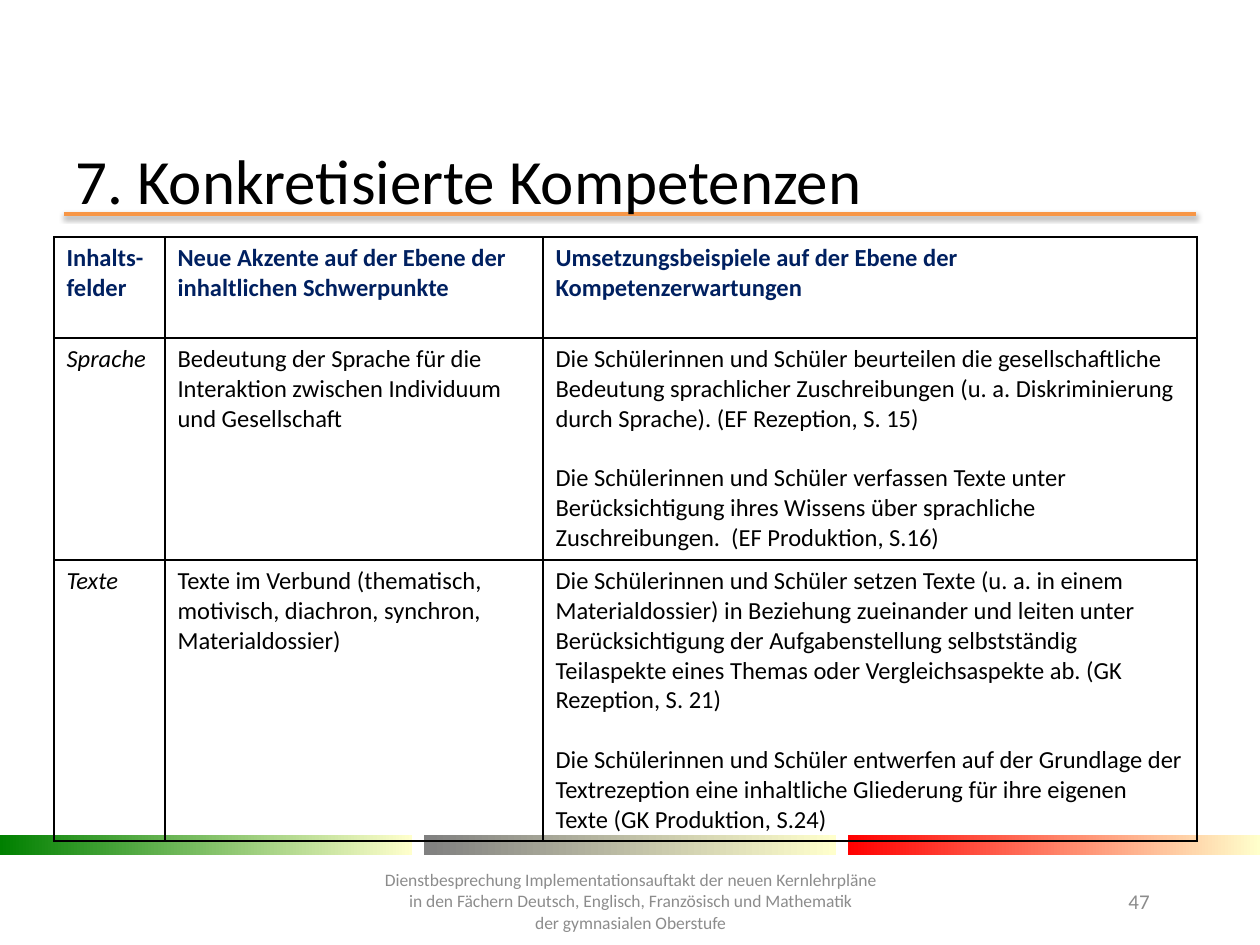
from dataclasses import dataclass

from lxml.etree import SubElement
from pptx import Presentation
from pptx.dml.color import RGBColor
from pptx.enum.shapes import MSO_CONNECTOR, MSO_SHAPE
from pptx.enum.text import MSO_ANCHOR, PP_ALIGN
from pptx.oxml.ns import qn
from pptx.util import Emu, Pt


@dataclass(frozen=True)
class Theme:
    """Colours, font and type sizes of the slide."""
    font: str = "Calibri"
    ink: str = "000000"
    heading: str = "002060"
    muted: str = "8C8C8C"
    accent: str = "F79646"
    green: str = "008000"
    grey: str = "808080"
    red: str = "FF0000"
    cream: str = "FFFFCC"
    title_size: int = 36
    body_size: int = 14
    number_size: int = 12
    footer_size: int = 10
    paragraph_gap: int = 17


THEME = Theme()

HEADINGS = [
    "Inhalts-felder",
    "Neue Akzente auf der Ebene der inhaltlichen Schwerpunkte",
    "Umsetzungsbeispiele auf der Ebene der Kompetenzerwartungen",
]
FIELDS = [
    (
        "Sprache",
        "Bedeutung der Sprache für die Interaktion zwischen Individuum und Gesellschaft",
        "Die Schülerinnen und Schüler beurteilen die gesellschaftliche Bedeutung "
        "sprachlicher Zuschreibungen (u. a. Diskriminierung durch Sprache). "
        "(EF Rezeption, S. 15)\n"
        "Die Schülerinnen und Schüler verfassen Texte unter Berücksichtigung ihres "
        "Wissens über sprachliche Zuschreibungen.  (EF Produktion, S.16)",
    ),
    (
        "Texte",
        "Texte im Verbund (thematisch, motivisch, diachron, synchron, Materialdossier)",
        "Die Schülerinnen und Schüler setzen Texte (u. a. in einem Materialdossier) in "
        "Beziehung zueinander und leiten unter Berücksichtigung der Aufgabenstellung "
        "selbstständig Teilaspekte eines Themas oder Vergleichsaspekte ab. "
        "(GK Rezeption, S. 21)\n"
        "Die Schülerinnen und Schüler entwerfen auf der Grundlage der Textrezeption "
        "eine inhaltliche Gliederung für ihre eigenen Texte (GK Produktion, S.24)",
    ),
]
FOOTER = [
    "Dienstbesprechung Implementationsauftakt der neuen Kernlehrpläne",
    "in den Fächern Deutsch, Englisch, Französisch und Mathematik",
    "der gymnasialen Oberstufe",
]


def px(length):
    """Turn whole pixels into EMU."""
    return Emu(round(length * 914400 / 126))


def write_text(frame, text, size, color=THEME.ink, bold=False, italic=False,
               align=PP_ALIGN.LEFT, gap=0):
    """Fill a text frame, one paragraph per line of text."""
    frame.word_wrap = True
    for index, line in enumerate(text.split("\n")):
        paragraph = frame.add_paragraph() if index else frame.paragraphs[0]
        paragraph.text = line
        paragraph.alignment = align
        if index and gap:
            paragraph.space_before = Pt(gap)
        font = paragraph.font
        font.name, font.size = THEME.font, Pt(size)
        font.bold, font.italic = bold, italic
        font.color.rgb = RGBColor.from_string(color)


def add_label(slide, box, text, anchor=MSO_ANCHOR.MIDDLE, **style):
    """Place a text box with formatted text."""
    frame = slide.shapes.add_textbox(*map(px, box)).text_frame
    frame.vertical_anchor = anchor
    write_text(frame, text, **style)


def add_title(slide, left, top, width, height):
    """Place the title and the shadowed rule beneath it."""
    rule_top = top + 59
    rule = slide.shapes.add_connector(
        MSO_CONNECTOR.STRAIGHT, px(left + 1), px(rule_top),
        px(left + width - 1), px(rule_top))
    rule.line.color.rgb = RGBColor.from_string(THEME.accent)
    rule.line.width = Pt(2)
    effects = SubElement(rule._element.spPr, qn("a:effectLst"))
    shadow = SubElement(effects, qn("a:outerShdw"), blurRad=str(Pt(3.1)),
                        dist=str(Pt(1.6)), dir="5400000", rotWithShape="0")
    shade = SubElement(shadow, qn("a:srgbClr"), val=THEME.ink)
    SubElement(shade, qn("a:alpha"), val="38000")
    add_label(slide, (left, top, width, height), "7. Konkretisierte Kompetenzen",
              size=THEME.title_size)


def add_colour_bands(slide, left, top, width, height):
    """Place three equally spaced gradient bands across the box."""
    band_width = 412
    step = (width - band_width) / 2
    fades = [(THEME.green, THEME.cream), (THEME.grey, THEME.cream),
             (THEME.red, THEME.cream)]
    for index, fade in enumerate(fades):
        band = slide.shapes.add_shape(
            MSO_SHAPE.RECTANGLE, px(left + index * step), px(top),
            px(band_width), px(height))
        band.shadow.inherit = False
        band.line.fill.background()
        band.fill.gradient()
        band.fill.gradient_angle = 0
        for stop, color, position in zip(band.fill.gradient_stops, fade, (0, 1)):
            stop.color.rgb = RGBColor.from_string(color)
            stop.position = position


def outline_cell(cell):
    """Give a cell thin black borders and no fill."""
    properties = cell._tc.get_or_add_tcPr()
    for side in ("lnL", "lnR", "lnT", "lnB"):
        border = SubElement(properties, qn(f"a:{side}"), w=str(Pt(1)))
        fill = SubElement(border, qn("a:solidFill"))
        SubElement(fill, qn("a:srgbClr"), val=THEME.ink)
    cell.fill.background()


def add_competence_table(slide, left, top, width, height):
    """Place the table of content fields, accents and examples."""
    column_widths = [111, 378, width - 489]
    row_heights = [101, 222, height - 323]
    rows = [HEADINGS, *FIELDS]
    table = slide.shapes.add_table(
        len(rows), len(HEADINGS), px(left), px(top), px(width), px(height)).table
    table.first_row = table.horz_banding = False
    for column, column_width in zip(table.columns, column_widths):
        column.width = px(column_width)
    for row_index, (texts, row_height) in enumerate(zip(rows, row_heights)):
        table.rows[row_index].height = px(row_height)
        is_heading = row_index == 0
        for column_index, text in enumerate(texts):
            cell = table.cell(row_index, column_index)
            outline_cell(cell)
            write_text(cell.text_frame, text, size=THEME.body_size,
                       color=THEME.heading if is_heading else THEME.ink,
                       bold=is_heading,
                       italic=not is_heading and column_index == 0,
                       gap=THEME.paragraph_gap)


def add_footer(slide, left, top, width, height):
    """Place the centred event line and the slide number."""
    add_label(slide, (left + 323, top, 615, height), "\v".join(FOOTER),
              size=THEME.footer_size, color=THEME.muted, align=PP_ALIGN.CENTER)
    add_label(slide, (left + width - 81, top + 16, 81, 50), "47",
              anchor=MSO_ANCHOR.TOP, size=THEME.number_size, color=THEME.muted)


def main():
    """Build and save the slide."""
    presentation = Presentation()
    presentation.slide_width, presentation.slide_height = px(1260), px(945)
    slide = presentation.slides.add_slide(presentation.slide_layouts[6])
    add_colour_bands(slide, 0, 835, 1260, 20)
    add_title(slide, 63, 155, 1134, 49)
    add_competence_table(slide, 54, 237, 1143, 604)
    add_footer(slide, 0, 866, 1197, 70)
    presentation.save("out.pptx")


if __name__ == "__main__":
    main()
